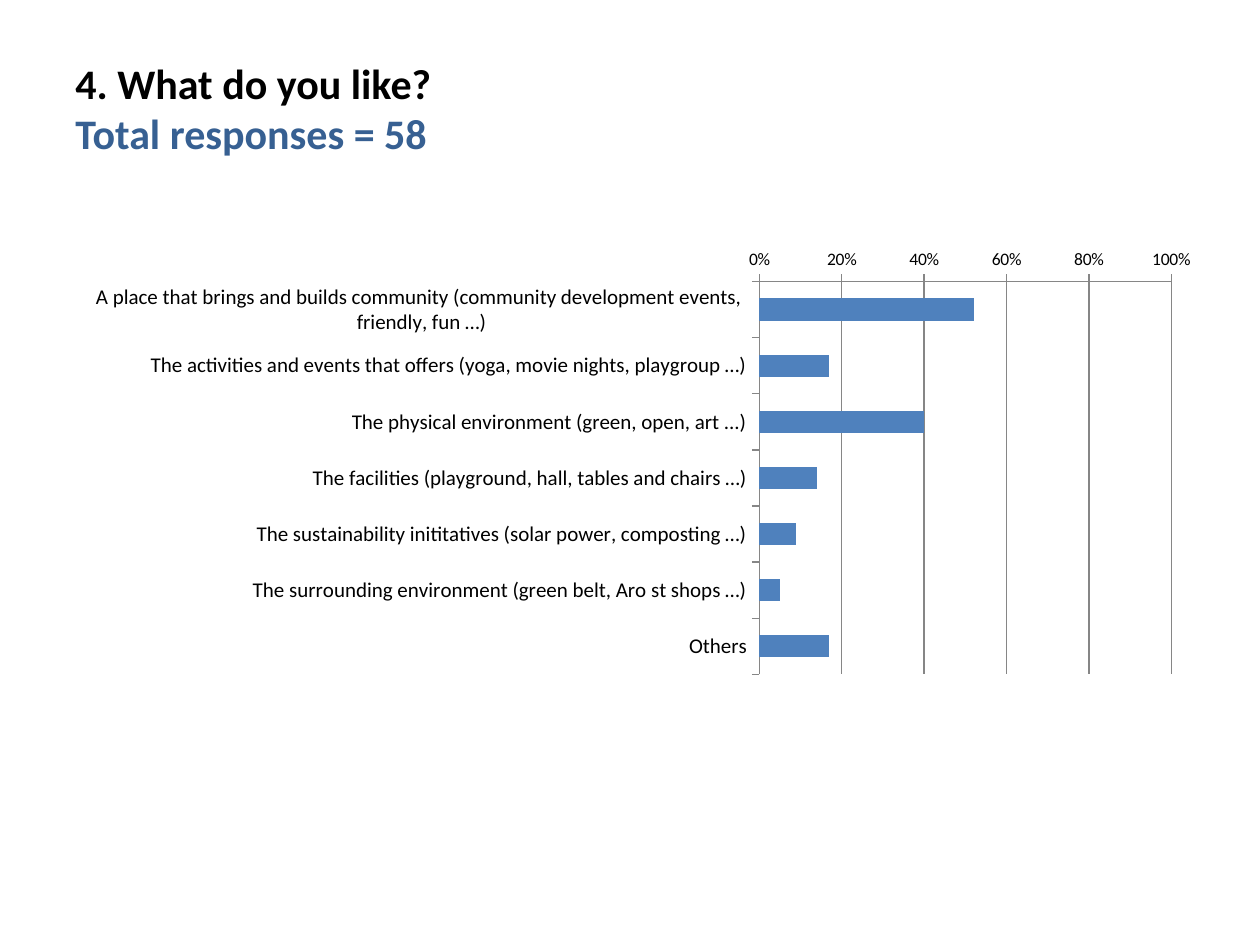
import pptx
import pptx.util
import pptx.dml.color
import pptx.chart.data
import pptx.enum.chart
import pptx.enum.text
import pptx.oxml

RGB = pptx.dml.color.RGBColor.from_string
Pt = pptx.util.Pt
chart_enum = pptx.enum.chart

theme = {
    "font": "Calibri",
    "text": RGB("000000"),
    "accent": RGB("376092"),
    "bar": RGB("4F81BD"),
    "grid": RGB("868686"),
    "title_size": Pt(24),
    "category_size": Pt(12),
    "scale_size": Pt(10),
}

likes = {
    "A place that brings and builds community (community development events,  friendly, fun …)": 0.52,
    "The activities and events that offers (yoga, movie nights, playgroup …)": 0.17,
    "The physical environment (green, open, art ...)": 0.4,
    "The facilities (playground, hall, tables and chairs …)": 0.14,
    "The sustainability inititatives (solar power, composting …)": 0.09,
    "The surrounding environment (green belt, Aro st shops …)": 0.05,
    "Others": 0.17,
}

deck = pptx.Presentation()
deck.slide_width = pptx.util.Inches(10)
deck.slide_height = pptx.util.Inches(7.5)
page = deck.slides.add_slide(deck.slide_layouts[6])


def place(left, top, width, height):
    return (
        int(left * deck.slide_width),
        int(top * deck.slide_height),
        int(width * deck.slide_width),
        int(height * deck.slide_height),
    )


title_box = page.shapes.add_textbox(*place(0.05, 0.04, 0.9, 1 / 6))
frame = title_box.text_frame
frame.word_wrap = True
frame.vertical_anchor = pptx.enum.text.MSO_ANCHOR.MIDDLE
frame.margin_bottom = pptx.util.Inches(0.19)
headings = [("4. What do you like?", theme["text"]), ("Total responses = 58", theme["accent"])]
for index, (wording, color) in enumerate(headings):
    para = frame.add_paragraph() if index else frame.paragraphs[0]
    para.text = wording
    para.font.name = theme["font"]
    para.font.size = theme["title_size"]
    para.font.bold = True
    para.font.color.rgb = color

chart_data = pptx.chart.data.CategoryChartData(number_format="0%")
chart_data.categories = list(likes)
chart_data.add_series("Series 1", list(likes.values()))
chart = page.shapes.add_chart(
    chart_enum.XL_CHART_TYPE.BAR_CLUSTERED, *place(0.058, 0.256, 0.908, 0.467), chart_data
).chart
chart.has_legend = False
chart.has_title = False
chart.font.name = theme["font"]
chart.font.size = theme["scale_size"]
chart.font.color.rgb = theme["text"]

plot = chart.plots[0]
plot.gap_width = 150
plot.vary_by_categories = False
bars = plot.series[0].format.fill
bars.solid()
bars.fore_color.rgb = theme["bar"]

category_axis = chart.category_axis
category_axis.reverse_order = True
category_axis.tick_labels.font.size = theme["category_size"]

value_axis = chart.value_axis
value_axis.minimum_scale = 0
value_axis.maximum_scale = 1
value_axis.major_unit = 0.2
value_axis.has_major_gridlines = True
value_axis.tick_labels.number_format = "0%"
value_axis.tick_labels.number_format_is_linked = False

for axis in (category_axis, value_axis):
    axis.major_tick_mark = chart_enum.XL_TICK_MARK.OUTSIDE
for ruled in (category_axis, value_axis, value_axis.major_gridlines):
    ruled.format.line.color.rgb = theme["grid"]
    ruled.format.line.width = Pt(0.75)

plot_area = chart.element.chart.plotArea
for layout in plot_area.xpath("c:layout"):
    plot_area.remove(layout)
shares = {"x": 0.6, "y": 0.09, "w": 0.36, "h": 0.89}
modes = '<c:layoutTarget val="inner"/><c:xMode val="edge"/><c:yMode val="edge"/>'
sides = "".join(f'<c:{side} val="{share}"/>' for side, share in shares.items())
plot_area.insert(0, pptx.oxml.parse_xml(
    '<c:layout xmlns:c="http://schemas.openxmlformats.org/drawingml/2006/chart">'
    f"<c:manualLayout>{modes}{sides}</c:manualLayout></c:layout>"
))

deck.save("out.pptx")
